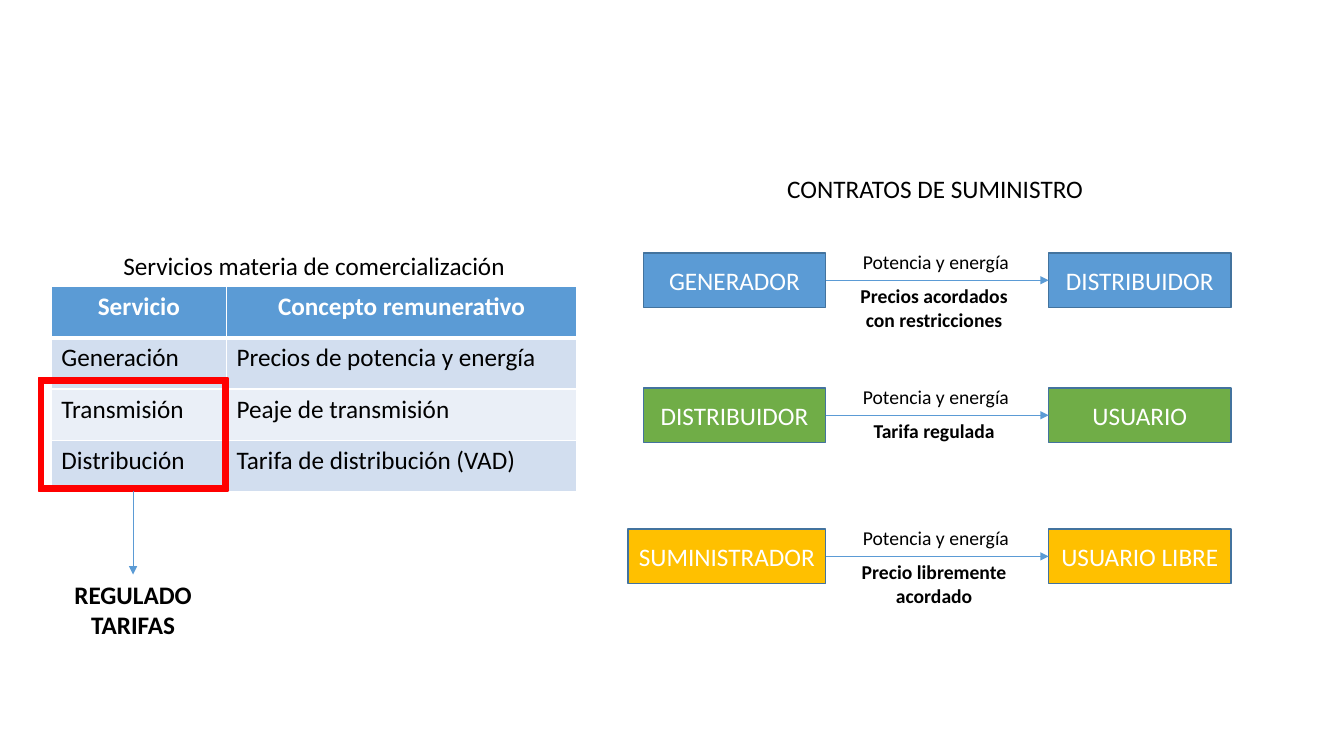
from lxml import etree
from pptx import Presentation
from pptx.dml.color import RGBColor
from pptx.enum.shapes import MSO_CONNECTOR, MSO_SHAPE
from pptx.enum.text import MSO_ANCHOR, MSO_AUTO_SIZE, PP_ALIGN
from pptx.oxml.ns import qn
from pptx.util import Inches, Pt

BLUE, GREEN, AMBER = "5B9BD5", "70AD47", "FFC000"
OUTLINE, RED, WHITE, BLACK = "43739E", "FF0000", "FFFFFF", "000000"
BAND_DARK, BAND_LIGHT = "D2DEEF", "EAEFF7"

SERVICES = [
    ("Servicio", "Concepto remunerativo"),
    ("Generación", "Precios de potencia y energía"),
    ("Transmisión", "Peaje de transmisión"),
    ("Distribución", "Tarifa de distribución (VAD)"),
]
CONTRACTS = [
    (2.51, 6.38, BLUE, "GENERADOR", "DISTRIBUIDOR", "Precios acordados con restricciones", 0.57),
    (3.85, 6.38, GREEN, "DISTRIBUIDOR", "USUARIO", "Tarifa regulada", 0.34),
    (5.25, 6.23, AMBER, "SUMINISTRADOR", "USUARIO LIBRE", "Precio libremente acordado", 0.57),
]


def rgb(color):
    """Turn a hex string into a colour."""
    return RGBColor.from_string(color)


def write(tf, lines, size=18, color=BLACK, bold=False, align=PP_ALIGN.CENTER):
    """Write one paragraph per line into a text frame."""
    for i, line in enumerate(lines):
        p = tf.paragraphs[0] if i == 0 else tf.add_paragraph()
        p.alignment = align
        r = p.add_run()
        r.text = line
        r.font.name = "Calibri"
        r.font.size = Pt(size)
        r.font.bold = bold
        r.font.color.rgb = rgb(color)


def add_label(s, x, y, w, h, lines, wrap=False, **style):
    """Add a text box that grows with its text."""
    sp = s.shapes.add_textbox(Inches(x), Inches(y), Inches(w), Inches(h))
    tf = sp.text_frame
    tf.word_wrap = wrap
    tf.auto_size = MSO_AUTO_SIZE.SHAPE_TO_FIT_TEXT
    write(tf, lines, **style)
    return sp


def add_block(s, kind, x, y, w, h, fill, line):
    """Add a flat filled shape with a thin outline."""
    sp = s.shapes.add_shape(kind, Inches(x), Inches(y), Inches(w), Inches(h))
    sp.shadow.inherit = False
    sp.fill.solid()
    sp.fill.fore_color.rgb = rgb(fill)
    sp.line.color.rgb = rgb(line)
    sp.line.width = Pt(1)
    return sp


def add_party(s, x, y, w, h, name, fill):
    """Add the rectangle of one contract party."""
    sp = add_block(s, MSO_SHAPE.RECTANGLE, x, y, w, h, fill, OUTLINE)
    sp.text_frame.vertical_anchor = MSO_ANCHOR.MIDDLE
    sp.text_frame.word_wrap = True
    write(sp.text_frame, [name], color=WHITE)
    return sp


def add_arrow(s, start, start_site, end, end_site):
    """Join two shapes with a thin arrow."""
    cx = s.shapes.add_connector(MSO_CONNECTOR.STRAIGHT, 0, 0, 0, 0)
    cx.begin_connect(start, start_site)
    cx.end_connect(end, end_site)
    cx.line.color.rgb = rgb(BLUE)
    cx.line.width = Pt(0.5)
    etree.SubElement(cx.line._get_or_add_ln(), qn("a:tailEnd"), type="triangle")
    etree.SubElement(cx._element.spPr, qn("a:effectLst"))


def set_borders(cell, bottom):
    """Give a cell white borders with the given bottom width."""
    tcPr = cell._tc.get_or_add_tcPr()
    for i, (side, width) in enumerate([("L", 1), ("R", 1), ("T", 1), ("B", bottom)]):
        ln = etree.Element(qn("a:ln" + side), w=str(Pt(width)))
        fill = etree.SubElement(ln, qn("a:solidFill"))
        etree.SubElement(fill, qn("a:srgbClr"), val=WHITE)
        tcPr.insert(i, ln)


def add_services(s, x, y, w, row_h):
    """Build the services table, its title and the regulated mark."""
    add_label(s, x + 0.56, y - 0.41, 4.09, 0.4, ["Servicios materia de comercialización"])
    rows = len(SERVICES)
    table = s.shapes.add_table(rows, 2, Inches(x), Inches(y), Inches(w), Inches(rows * row_h)).table
    table.columns[0].width = Inches(w / 3)
    table.columns[1].width = Inches(w * 2 / 3)
    for i, row in enumerate(SERVICES):
        header = i == 0
        fill = BLUE if header else BAND_DARK if i % 2 else BAND_LIGHT
        for j, text in enumerate(row):
            cell = table.cell(i, j)
            cell.fill.solid()
            cell.fill.fore_color.rgb = rgb(fill)
            set_borders(cell, 3 if header or i == 0 else 1)
            write(cell.text_frame, [text], color=WHITE if header else BLACK, bold=header,
                  align=PP_ALIGN.CENTER if header else PP_ALIGN.LEFT)
    frame = add_block(s, MSO_SHAPE.FRAME, x - 0.13, y + 0.91, 1.88, 1.12, RED, RED)
    frame.adjustments[0] = 0.046
    regulated = add_label(s, x + 0.12, y + 2.86, 1.38, 0.71, ["REGULADO", "TARIFAS"], bold=True)
    add_arrow(s, frame, 2, regulated, 0)


def add_contract(s, x, y, w, h, fill, seller, buyer, price, price_h):
    """Build one contract: two parties, an arrow and its labels."""
    gap_x, party_w = 8.19, 1.81
    buyer_x = x + w - party_w
    left = add_party(s, x, y, gap_x - x, h, seller, fill)
    right = add_party(s, buyer_x, y, party_w, h, buyer, fill)
    add_arrow(s, left, 3, right, 1)
    add_label(s, gap_x + 0.27, y - 0.08, 1.67, 0.34, ["Potencia y energía"],
              size=14, align=PP_ALIGN.LEFT)
    add_label(s, gap_x + 0.22, y + 0.26, 1.71, price_h, [price], wrap=True, size=14, bold=True)


def add_contracts(s, right, party_h):
    """Build the title and the rows of supply contracts."""
    add_label(s, 7.71, 1.67, 3.16, 0.4, ["CONTRATOS DE SUMINISTRO"], align=PP_ALIGN.LEFT)
    for y, x, *contract in CONTRACTS:
        add_contract(s, x, y, right - x, party_h, *contract)


def main():
    """Build and save the slide."""
    prs = Presentation()
    prs.slide_width, prs.slide_height = Inches(13.33), Inches(7.5)
    s = prs.slides.add_slide(prs.slide_layouts[6])
    add_contracts(s, 12.21, 0.54)
    add_services(s, 0.51, 2.84, 5.21, 0.51)
    prs.save("out.pptx")


if __name__ == "__main__":
    main()
